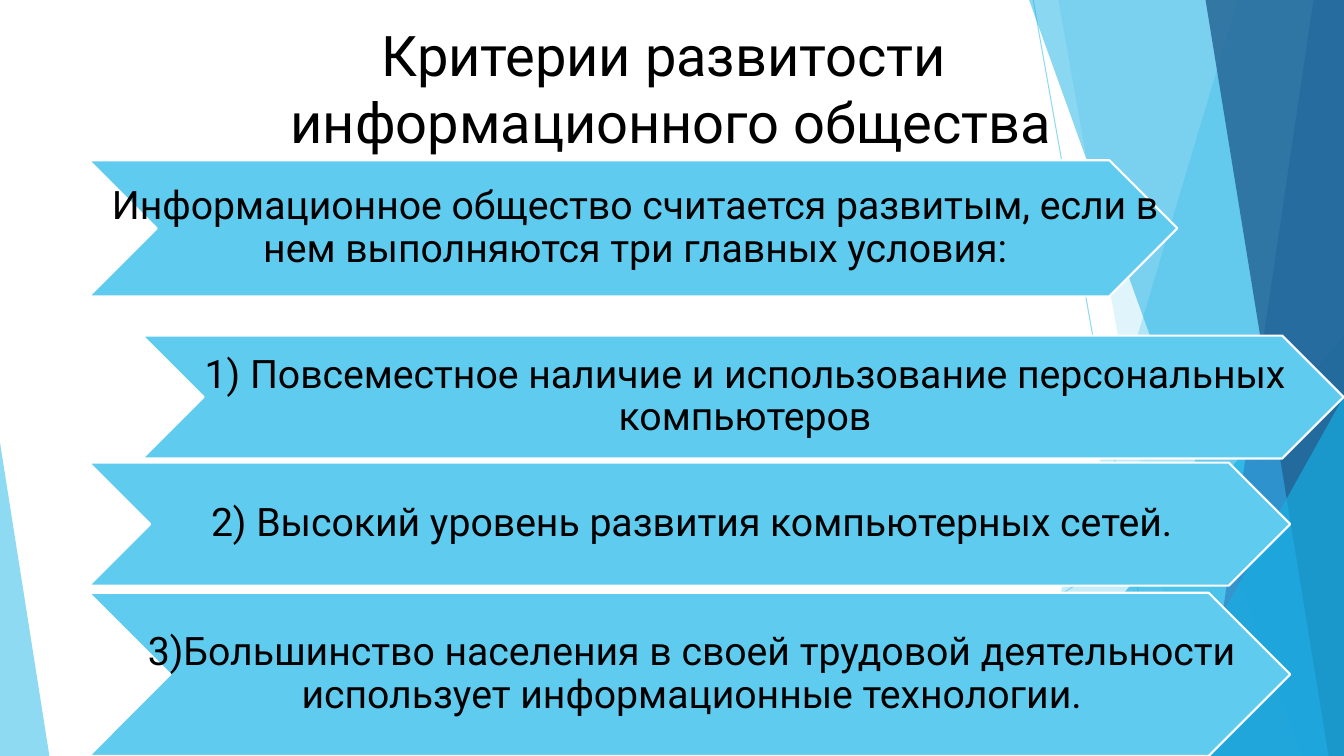
from lxml.etree import SubElement
from pptx import Presentation
from pptx.dml.color import RGBColor
from pptx.enum.shapes import MSO_CONNECTOR, MSO_SHAPE
from pptx.enum.text import MSO_ANCHOR, PP_ALIGN
from pptx.oxml.ns import qn
from pptx.util import Pt

WHITE = RGBColor(0xFF, 0xFF, 0xFF)
BLACK = RGBColor(0, 0, 0)
SKY = RGBColor(0x5F, 0xCB, 0xEF)
CYAN = RGBColor(0x17, 0xB0, 0xE4)
BLUE = RGBColor(0x2E, 0x83, 0xC3)
NAVY = RGBColor(0x22, 0x62, 0x92)
FONT = "Roboto"


def fade(fill, alpha):
    """Set the opacity of a solid fill, in percent."""
    tint = fill._xPr.find(qn("a:solidFill"))[0]
    SubElement(tint, qn("a:alpha"), val=str(alpha * 1000))


def paint(shape, color, alpha=100, edge=None):
    shape.shadow.inherit = False
    shape.fill.solid()
    shape.fill.fore_color.rgb = color
    if alpha < 100:
        fade(shape.fill, alpha)
    if edge is None:
        shape.line.fill.background()
    else:
        shape.line.color.rgb = edge
        shape.line.width = Pt(1.5)


def write(slide, text, box, size=28, color=BLACK, space=1.0,
          anchor=MSO_ANCHOR.MIDDLE, pad=(3, 1.5, 0, 1.5)):
    frame = slide.shapes.add_textbox(*map(Pt, box)).text_frame
    frame.word_wrap = True
    frame.vertical_anchor = anchor
    (frame.margin_left, frame.margin_top,
     frame.margin_right, frame.margin_bottom) = map(Pt, pad)
    frame.text = text
    para = frame.paragraphs[0]
    para.alignment = PP_ALIGN.CENTER
    para.line_spacing = space
    para.font.name = FONT
    para.font.size = Pt(size)
    para.font.color.rgb = color


def ray(slide, x1, y1, x2, y2):
    line = slide.shapes.add_connector(
        MSO_CONNECTOR.STRAIGHT, Pt(x1), Pt(y1), Pt(x2), Pt(y2))
    line.line.color.rgb = SKY
    line.line.width = Pt(0.75)
    fade(line.line.fill, 70)
    SubElement(line._element.spPr, qn("a:effectLst"))


def facet(slide, box, top, base, color, alpha):
    """Fill the area from a slanted left edge to the box's right side."""
    x, y, w, h = box
    right, foot = Pt(x + w), Pt(y + h)
    pen = slide.shapes.build_freeform(Pt(x + top), Pt(y), scale=1.0)
    pen.add_line_segments(
        [(right, Pt(y)), (right, foot), (Pt(x + base), foot)], close=True)
    paint(pen.convert_to_shape(), color, alpha)


def wedge(slide, box, left, width, height, tip, color, alpha):
    """Stand a right triangle on the bottom of the box."""
    x, y, w, h = box
    shape = slide.shapes.add_shape(
        MSO_SHAPE.ISOSCELES_TRIANGLE, Pt(x + left), Pt(y + h - height),
        Pt(width), Pt(height))
    shape.adjustments[0] = tip
    paint(shape, color, alpha)


def backdrop(slide, box):
    x, y, w, h = box
    ray(slide, x + 738, y, x + 833.8, y + h)
    ray(slide, x + w, y + 290.2, x + 584.6, y + h)
    facet(slide, box, 884.2, 722.9, SKY, 36)
    facet(slide, box, 756, 851.8, SKY, 20)
    wedge(slide, box, 703.4, 256.6, 300.2, 1, CYAN, 66)
    facet(slide, box, 735.1, 929.5, CYAN, 50)
    facet(slide, box, 938.2, 858.2, BLUE, 70)
    facet(slide, box, 861.1, 949, NAVY, 80)
    wedge(slide, box, 816.5, 143.5, 257, 1, CYAN, 66)
    wedge(slide, box, 0, 35.3, 223.9, 0, SKY, 70)


def arrows(slide, box):
    x, y, w, h = box
    # Indent, top, width, height, text
    rows = [
        (0, 0, 777.6, 97.2, "Информационное общество считается развитым, "
         "если в нем выполняются три главных условия:"),
        (38.2, 125.2, 858.2, 87.8, "1) Повсеместное наличие и "
         "использование персональных компьютеров"),
        (0, 216, 858.2, 87.8,
         "2) Высокий уровень развития компьютерных сетей."),
        (0, 308.9, 858.2, 116.6, "3)Большинство населения в своей трудовой "
         "деятельности использует информационные технологии."),
    ]
    for left, top, wide, high, text in rows:
        area = (x + left, y + top, wide, high)
        shape = slide.shapes.add_shape(MSO_SHAPE.CHEVRON, *map(Pt, area))
        paint(shape, SKY, edge=WHITE)
        write(slide, text, area, space=0.9)


def main():
    deck = Presentation()
    deck.slide_width, deck.slide_height = Pt(960), Pt(540)
    slide = deck.slides.add_slide(deck.slide_layouts[6])
    # Faceted background
    backdrop(slide, (0, 0, 960, 540))
    # Title
    write(slide, "Критерии развитости \vинформационного общества",
          (24.5, 10.8, 909.4, 103.7), size=40,
          anchor=MSO_ANCHOR.TOP, pad=(7.2, 3.6, 7.2, 3.6))
    # Criteria
    arrows(slide, (63.4, 114.5, 896.6, 425.5))
    deck.save("out.pptx")


if __name__ == "__main__":
    main()
